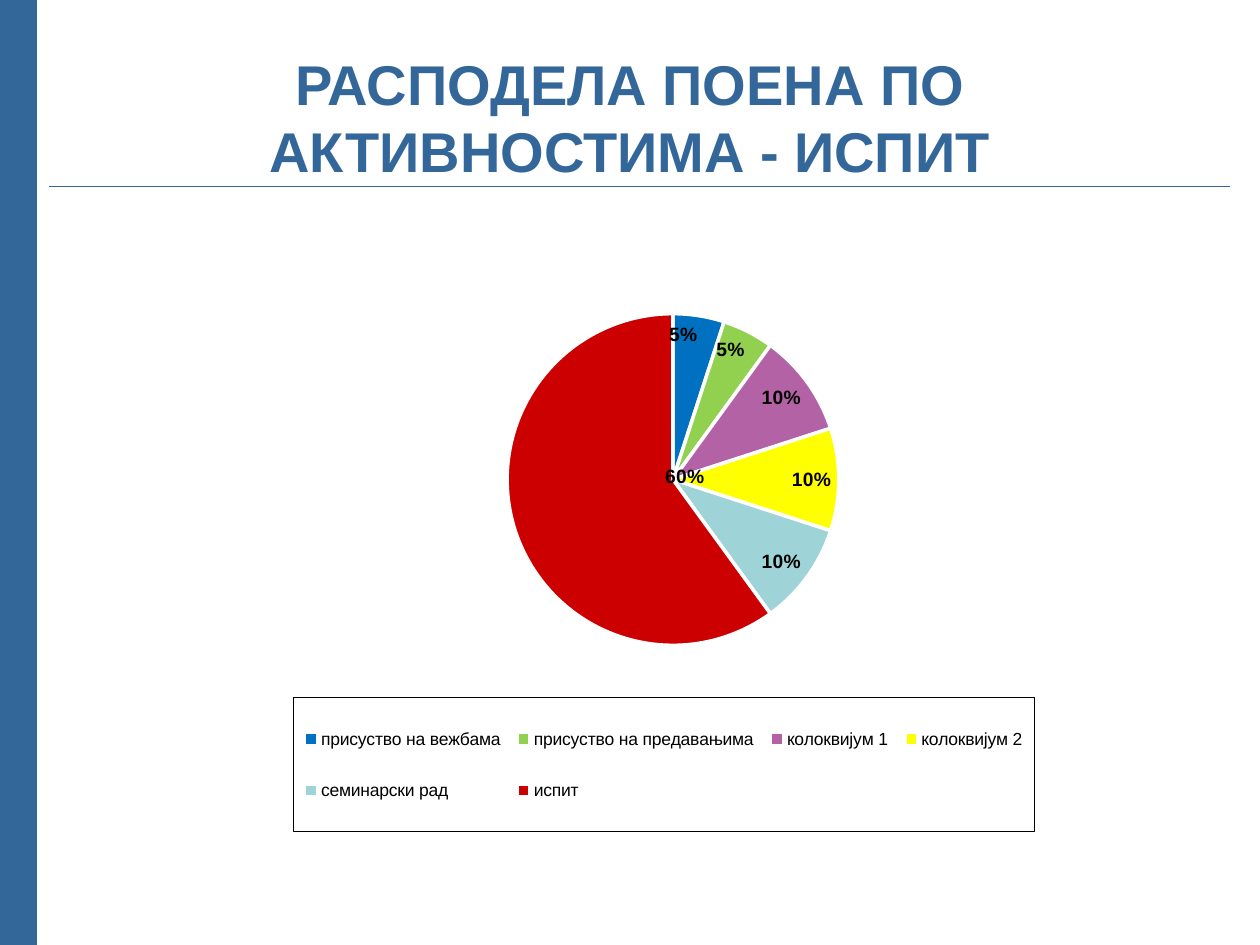
from pptx import Presentation
from pptx.chart.data import CategoryChartData
from pptx.dml.color import RGBColor
from pptx.enum.chart import XL_CHART_TYPE as ChartType
from pptx.enum.chart import XL_LABEL_POSITION as LabelPosition
from pptx.enum.chart import XL_LEGEND_POSITION as LegendPosition
from pptx.enum.shapes import MSO_CONNECTOR as Connector
from pptx.enum.text import MSO_ANCHOR as Anchor
from pptx.enum.text import PP_ALIGN as Align
from pptx.oxml import parse_xml
from pptx.oxml.ns import nsdecls, qn
from pptx.util import Inches, Pt

BLUE = RGBColor(0x33, 0x66, 0x99)
BLACK = RGBColor(0, 0, 0)
WHITE = RGBColor(0xFF, 0xFF, 0xFF)
FONT = "Arial"

ACTIVITIES = [
    ("присуство на вежбама", 0.05, RGBColor(0x00, 0x70, 0xC0)),
    ("присуство на предавањима", 0.05, RGBColor(0x92, 0xD0, 0x50)),
    ("колоквијум 1", 0.1, RGBColor(0xB4, 0x62, 0xA6)),
    ("колоквијум 2", 0.1, RGBColor(0xFF, 0xFF, 0x00)),
    ("семинарски рад", 0.1, RGBColor(0x9E, 0xD3, 0xD7)),
    ("испит", 0.6, RGBColor(0xCC, 0x00, 0x00)),
]


def style_font(font, size, color, bold=False):
    font.name = FONT
    font.size = Pt(size)
    font.bold = bold
    font.color.rgb = color


def add_title(slide, text):
    title = slide.shapes.add_textbox(Inches(0.5), Inches(0.3), Inches(9), Inches(1.25))
    frame = title.text_frame
    frame.word_wrap = True
    frame.vertical_anchor = Anchor.MIDDLE
    frame.text = text
    heading = frame.paragraphs[0]
    heading.alignment = Align.CENTER
    style_font(heading.runs[0].font, 32, BLUE, bold=True)


def add_rule(slide, start, end, width):
    ends = [Inches(value) for value in (*start, *end)]
    rule = slide.shapes.add_connector(Connector.STRAIGHT, *ends)
    rule.line.color.rgb = BLUE
    rule.line.width = Pt(width)
    rule._element.spPr.append(parse_xml(f"<a:effectLst {nsdecls('a')}/>"))


def manual_layout(x, y, size=None, inner=False):
    target = '<c:layoutTarget val="inner"/>' if inner else ""
    modes = '<c:xMode val="edge"/><c:yMode val="edge"/>' if size else ""
    extent = f'<c:w val="{size[0]}"/><c:h val="{size[1]}"/>' if size else ""
    return parse_xml(
        f"<c:layout {nsdecls('c')}><c:manualLayout>{target}{modes}"
        f'<c:x val="{x}"/><c:y val="{y}"/>{extent}</c:manualLayout></c:layout>'
    )


def replace_layout(element, layout, after=None):
    for old in element.findall(qn("c:layout")):
        element.remove(old)
    if after is None:
        element.insert(0, layout)
    else:
        element.find(qn(after)).addnext(layout)


def style_legend(chart):
    chart.has_legend = True
    legend = chart.legend
    legend.position = LegendPosition.BOTTOM
    legend.include_in_layout = False
    style_font(legend.font, 10, BLACK)
    replace_layout(legend._element, manual_layout(0.09, 0.74, (0.83, 0.23)), "c:legendPos")
    border = parse_xml(
        f"<c:spPr {nsdecls('c', 'a')}><a:noFill/><a:ln w=\"9525\"><a:solidFill>"
        f'<a:srgbClr val="{BLACK}"/></a:solidFill></a:ln></c:spPr>'
    )
    legend._element.find(qn("c:overlay")).addnext(border)


def style_labels(plot):
    plot.has_data_labels = True
    labels = plot.data_labels
    labels.show_value = True
    labels.show_percentage = False
    labels.number_format = "0%"
    labels.number_format_is_linked = False
    labels.position = LabelPosition.INSIDE_END
    style_font(labels.font, 11, BLACK, bold=True)


def move_exam_label(series):
    exam_label = series.points[len(ACTIVITIES) - 1].data_label
    style_font(exam_label.font, 11, BLACK, bold=True)
    exam_label.position = LabelPosition.INSIDE_END
    exam = series.data_labels._element.find(qn("c:dLbl"))
    replace_layout(exam, manual_layout(0.16, -0.07), "c:idx")
    labels = series.data_labels
    labels.show_value = True
    labels.number_format = "0%"
    labels.number_format_is_linked = False
    labels.position = LabelPosition.INSIDE_END
    style_font(labels.font, 11, BLACK, bold=True)


def add_points_chart(slide):
    data = CategoryChartData(number_format="0%")
    data.categories = [name for name, _, _ in ACTIVITIES]
    data.add_series("Series 1", [share for _, share, _ in ACTIVITIES])
    chart = slide.shapes.add_chart(
        ChartType.PIE, Inches(1.69), Inches(2.12), Inches(7.09), Inches(4.62), data
    ).chart
    chart.has_title = False
    style_font(chart.font, 10, BLACK)
    plot = chart.plots[0]
    plot.vary_by_categories = True
    series = plot.series[0]
    for index, (_, _, color) in enumerate(ACTIVITIES):
        slice_format = series.points[index].format
        slice_format.fill.solid()
        slice_format.fill.fore_color.rgb = color
        slice_format.line.color.rgb = WHITE
        slice_format.line.width = Pt(2)
    style_labels(plot)
    move_exam_label(series)
    style_legend(chart)
    plot_area = chart._chartSpace.chart.plotArea
    replace_layout(plot_area, manual_layout(0.08, 0.08, (0.87, 0.57), inner=True))


def main():
    deck = Presentation()
    deck.slide_width = Inches(10)
    deck.slide_height = Inches(7.5)
    slide = deck.slides.add_slide(deck.slide_layouts[6])
    add_title(slide, "РАСПОДЕЛА ПОЕНА ПО АКТИВНОСТИМА - ИСПИТ")
    add_rule(slide, (0.02, 0), (0.02, 7.5), 40)
    add_rule(slide, (0.39, 1.48), (9.76, 1.48), 0.75)
    add_points_chart(slide)
    deck.save("out.pptx")


if __name__ == "__main__":
    main()
